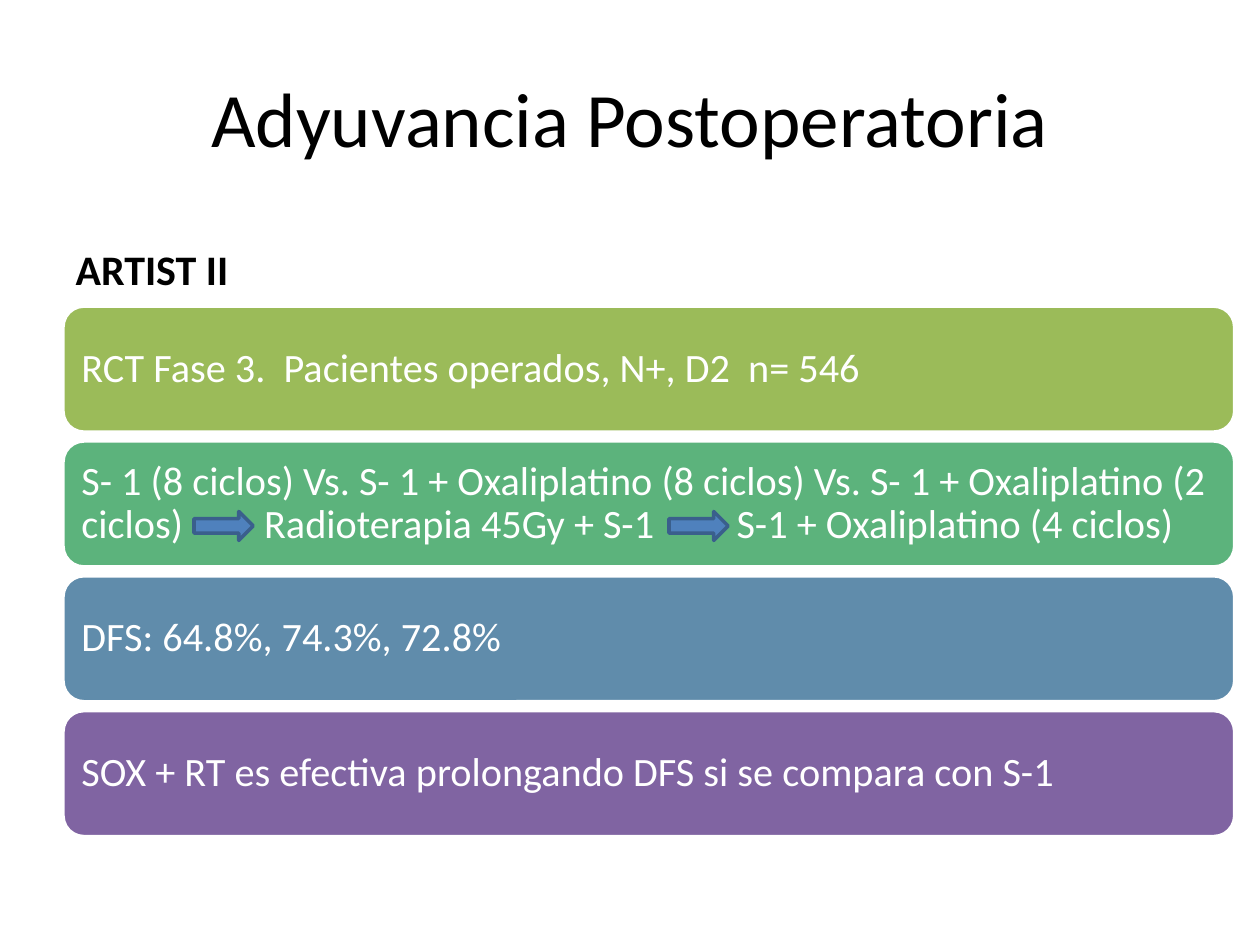
import dataclasses

import pptx
import pptx.dml.color
import pptx.enum.shapes
import pptx.enum.text
import pptx.util
from lxml import etree
from pptx.util import Inches, Pt

SHAPE = pptx.enum.shapes.MSO_SHAPE
ANCHOR = pptx.enum.text.MSO_ANCHOR
ALIGN = pptx.enum.text.PP_ALIGN


@dataclasses.dataclass(frozen=True)
class Theme:
    font: str = "Calibri"
    title_size: int = 44
    heading_size: int = 24
    band_size: int = 23
    text: str = "000000"
    white: str = "FFFFFF"
    arrow: str = "4F81BD"
    arrow_line: str = "3A5F8C"
    bands: tuple = ("9BBB59", "5CB37C", "608CAB", "8064A2")


THEME = Theme()

# Tabs leave room for the arrows inside the second band
BANDS = (
    "RCT Fase 3.  Pacientes operados, N+, D2  n= 546",
    "S- 1 (8 ciclos) Vs. S- 1 + Oxaliplatino (8 ciclos) Vs. S- 1 + Oxaliplatino "
    "(2 ciclos)\tRadioterapia 45Gy + S-1\tS-1 + Oxaliplatino (4 ciclos)",
    "DFS: 64.8%, 74.3%, 72.8%",
    "SOX + RT es efectiva prolongando DFS si se compara con S-1",
)
BAND_TOP, BAND_STEP = 2.43, 1.07
TAB_STOPS = (1.45, 5.2)
ARROW_LEFTS = (1.54, 5.31)


def rgb(value):
    return pptx.dml.color.RGBColor.from_string(value)


def write(shape, text, size, color, align, anchor, bold=False):
    tf = shape.text_frame
    tf.text = text
    tf.word_wrap = True
    tf.vertical_anchor = anchor
    p = tf.paragraphs[0]
    p.alignment = align
    for r in p.runs:
        r.font.name = THEME.font
        r.font.size = Pt(size)
        r.font.bold = bold
        r.font.color.rgb = rgb(color)
    return p


def place(shape, left, top, width, height):
    shape.left, shape.top = Inches(left), Inches(top)
    shape.width, shape.height = Inches(width), Inches(height)


def add_block(s, kind, box, fill, line):
    sp = s.shapes.add_shape(kind, *map(Inches, box))
    sp.shadow.inherit = False
    sp.fill.solid()
    sp.fill.fore_color.rgb = rgb(fill)
    sp.line.color.rgb = rgb(line)
    sp.line.width = Pt(2)
    return sp


def set_tabs(p, stops):
    qn = pptx.oxml.ns.qn
    tabs = etree.SubElement(p._p.get_or_add_pPr(), qn("a:tabLst"))
    for stop in stops:
        etree.SubElement(tabs, qn("a:tab"), pos=str(Inches(stop)), algn="l")


def add_band(s, top, text, fill):
    sp = add_block(s, SHAPE.ROUNDED_RECTANGLE, (0.5, top, 9.3, 1), fill, THEME.white)
    # The rounded corners inset the text a further 0.05 inch
    sp.text_frame.margin_left = Inches(0.1)
    sp.text_frame.margin_right = Inches(0.05)
    p = write(sp, text, THEME.band_size, THEME.white, ALIGN.LEFT, ANCHOR.MIDDLE)
    p.line_spacing = 0.9
    if "\t" in text:
        set_tabs(p, TAB_STOPS)


def main():
    prs = pptx.Presentation()
    prs.slide_width, prs.slide_height = Inches(10), Inches(7.5)
    s = prs.slides.add_slide(prs.slide_layouts.get_by_name("Comparison"))

    # Title and trial name
    title, heading, *unused = s.placeholders
    place(title, 0.5, 0.3, 9, 1.25)
    write(title, "Adyuvancia Postoperatoria", THEME.title_size, THEME.text,
          ALIGN.CENTER, ANCHOR.MIDDLE)
    place(heading, 0.5, 1.68, 4.42, 0.7)
    write(heading, "ARTIST II", THEME.heading_size, THEME.text,
          ALIGN.LEFT, ANCHOR.BOTTOM, bold=True)
    for ph in unused:
        ph.element.getparent().remove(ph.element)

    # Trial bands
    for i, (text, fill) in enumerate(zip(BANDS, THEME.bands)):
        add_band(s, BAND_TOP + i * BAND_STEP, text, fill)

    # Treatment sequence arrows
    for left in ARROW_LEFTS:
        add_block(s, SHAPE.RIGHT_ARROW, (left, 4.06, 0.47, 0.23),
                  THEME.arrow, THEME.arrow_line)

    prs.save("out.pptx")


if __name__ == "__main__":
    main()
